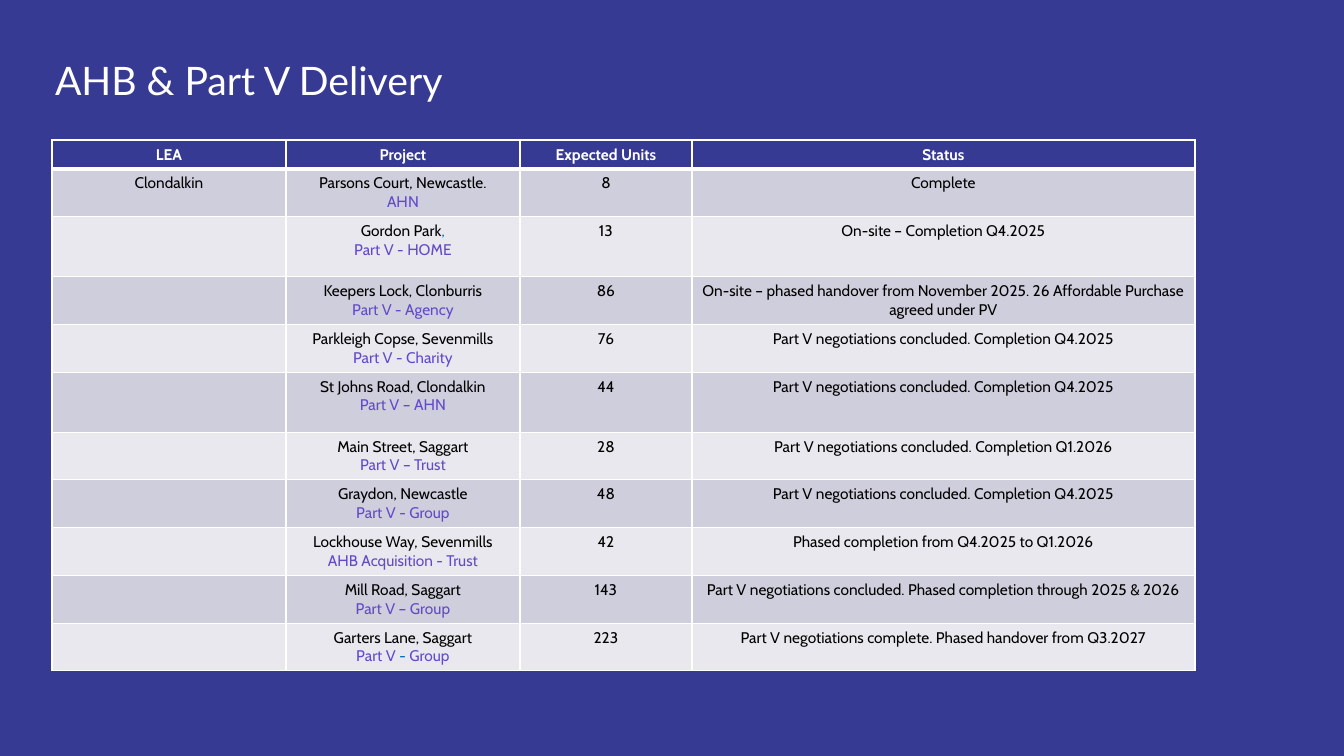
from lxml import etree
from pptx import Presentation
from pptx import util as u
from pptx.dml import color
from pptx.enum import text as t
from pptx.oxml import ns

NAVY, WHITE, BLACK = "363A92", "FFFFFF", "000000"
VIOLET, BLUE = "624AC9", "0070C0"
BANDS = "CECEDC", "E8E8EE"
COLS = 234, 234, 172, 503
HEAD = "LEA", "Project", "Expected Units", "Status"
DONE = "Part V negotiations concluded. "

# area, project, comma after it, scheme, units, status, row height
ROWS = [
    ("Clondalkin", "Parsons Court, Newcastle.", "", "AHN", "8", "Complete", 47),
    ("", "Gordon Park", ",", "Part V - HOME", "13",
     "On-site – Completion Q4.2025", 60),
    ("", "Keepers Lock, Clonburris", "", "Part V - Agency", "86",
     "On-site – phased handover from November 2025. "
     "26 Affordable Purchase agreed under PV", 47),
    ("", "Parkleigh Copse, Sevenmills", "", "Part V - Charity", "76",
     DONE + "Completion Q4.2025", 47),
    ("", "St Johns Road, Clondalkin", "", "Part V – AHN", "44",
     DONE + "Completion Q4.2025", 60),
    ("", "Main Street, Saggart", "", "Part V – Trust", "28",
     DONE + "Completion Q1.2026", 47),
    ("", "Graydon, Newcastle", "", "Part V - Group", "48",
     DONE + "Completion Q4.2025", 47),
    ("", "Lockhouse Way, Sevenmills", "", "AHB Acquisition - Trust", "42",
     "Phased completion from Q4.2025 to Q1.2026", 47),
    ("", "Mill Road, Saggart", "", "Part V – Group", "143",
     DONE + "Phased completion through 2025 & 2026", 47),
    ("", "Garters Lane, Saggart", "",
     [("Part V", VIOLET), (" - ", BLUE), ("Group", VIOLET)], "223",
     "Part V negotiations complete. Phased handover from Q3.2027", 47),
]


def px(n):
    return u.Emu(round(n * 914400 / 100.8))


def rgb(code):
    return color.RGBColor.from_string(code)


def write(frame, *lines, size=11, font="Cabin", tint=BLACK, bold=False,
          align=t.PP_ALIGN.CENTER):
    """Write each line as a paragraph; a line is a string or (text, colour) runs."""
    for i, line in enumerate(lines):
        para = frame.add_paragraph() if i else frame.paragraphs[0]
        para.alignment = align
        para.font.size = u.Pt(size)
        for part, hue in [(line, tint)] if isinstance(line, str) else line:
            run = para.add_run()
            run.text = part
            run.font.name, run.font.size = font, u.Pt(size)
            run.font.bold = bold
            run.font.color.rgb = rgb(hue)


def paint(cell, fill, top=1, base=1):
    """Give a cell white borders, in points, and a solid fill."""
    props = cell._tc.get_or_add_tcPr()
    for side, width in zip("LRTB", (1, 1, top, base)):
        line = etree.SubElement(props, ns.qn("a:ln" + side), w=str(u.Pt(width)))
        solid = etree.SubElement(line, ns.qn("a:solidFill"))
        etree.SubElement(solid, ns.qn("a:srgbClr"), val=WHITE)
    cell.fill.solid()
    cell.fill.fore_color.rgb = rgb(fill)


def title(slide, x, y, w, h):
    box = slide.shapes.title
    box.left, box.top, box.width, box.height = map(px, (x, y, w, h))
    frame = box.text_frame
    frame.margin_left = frame.margin_right = 0
    frame.margin_top = frame.margin_bottom = 0
    frame.vertical_anchor = t.MSO_ANCHOR.MIDDLE
    write(frame, "AHB & Part V Delivery", size=28, font="Lato", tint=WHITE,
          align=t.PP_ALIGN.LEFT)


def grid(slide, x, y, w, h):
    table = slide.shapes.add_table(
        len(ROWS) + 1, len(COLS), *map(px, (x, y, w, h))).table
    for col, width in zip(table.columns, COLS):
        col.width = px(width)
    table.rows[0].height = px(29)
    for cell, label in zip(table.rows[0].cells, HEAD):
        paint(cell, NAVY, base=3)
        write(cell.text_frame, label, tint=WHITE, bold=True)
    for i, (area, name, comma, scheme, units, status, high) in enumerate(ROWS):
        row = table.rows[i + 1]
        row.height = px(high)
        site = [(name, BLACK), (comma, BLUE)] if comma else name
        kind = [(scheme, VIOLET)] if isinstance(scheme, str) else scheme
        texts = [area], [site, kind], [units], [status]
        for cell, lines in zip(row.cells, texts):
            paint(cell, BANDS[i % 2], top=1 if i else 3)
            if lines[0]:
                write(cell.text_frame, *lines)


def main():
    deck = Presentation()
    deck.slide_width, deck.slide_height = px(1344), px(756)
    slide = deck.slides.add_slide(deck.slide_layouts[5])
    slide.background.fill.solid()
    slide.background.fill.fore_color.rgb = rgb(NAVY)
    title(slide, 55, 52, 545, 56)
    grid(slide, 52, 140, sum(COLS), 531)
    deck.save("out.pptx")


if __name__ == "__main__":
    main()
